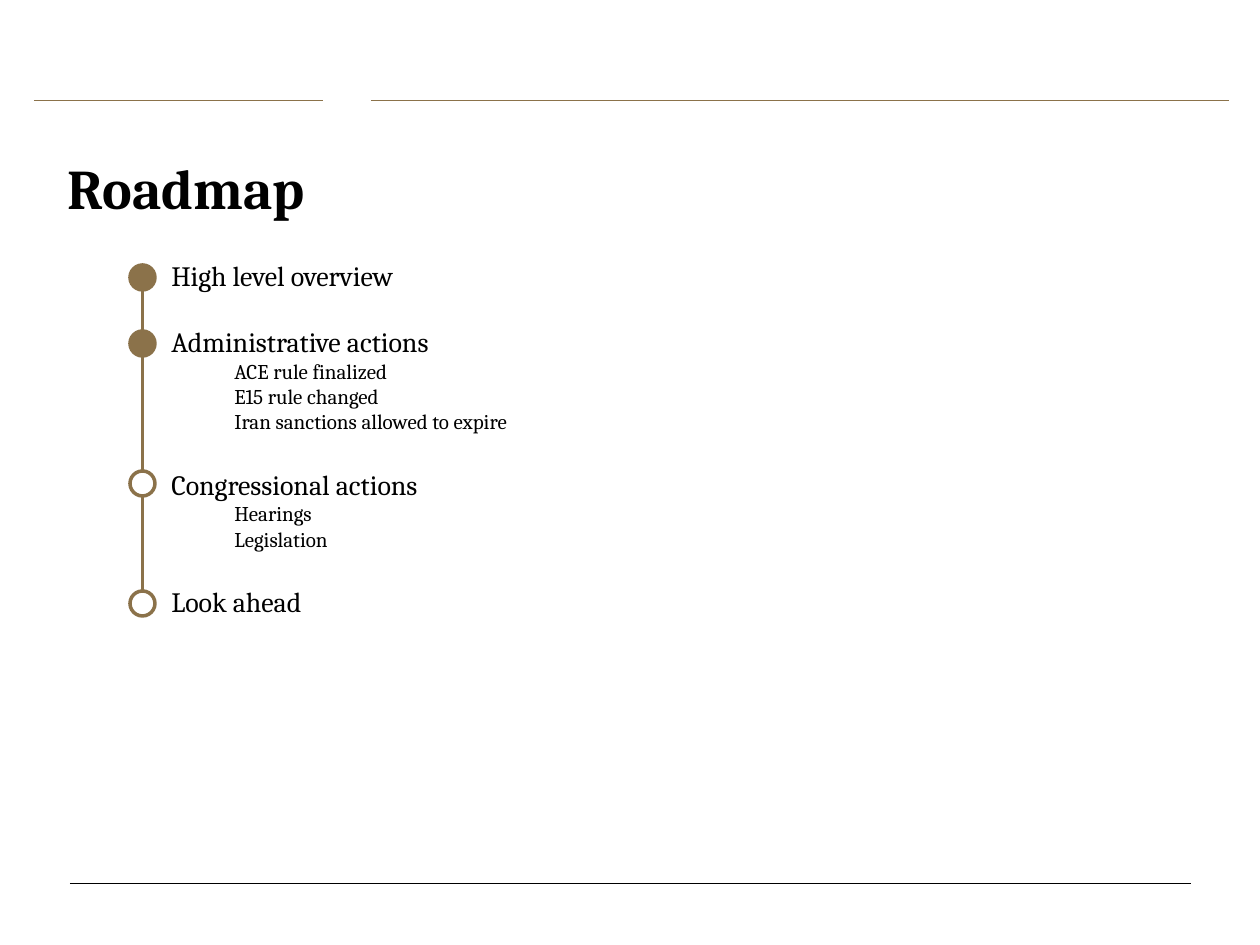
from lxml.etree import SubElement
from pptx import Presentation
from pptx.dml.color import RGBColor
from pptx.enum.shapes import MSO_CONNECTOR as Connector, MSO_SHAPE as Shape
from pptx.enum.text import MSO_ANCHOR as Anchor, MSO_AUTO_SIZE as AutoSize, PP_ALIGN as Align
from pptx.oxml.ns import qn
from pptx.util import Emu, Pt

SCALE = 914400 / 126
COLORS = {"black": "000000", "white": "FFFFFF", "bronze": "8B724A"}
FONT = "Cambria"
SECTIONS = [
    ("High level overview", []),
    ("Administrative actions",
     ["ACE rule finalized", "E15 rule changed", "Iran sanctions allowed to expire"]),
    ("Congressional actions", ["Hearings", "Legislation"]),
    ("Look ahead", []),
]
MARKERS = [(13, "bronze"), (79, "bronze"), (219, "white"), (339, "white")]


def px(value):
    return Emu(round(value * SCALE))


def color(name):
    return RGBColor.from_string(COLORS[name])


def write(paragraph, text, size=16, bold=False, indent=0, before=0, line_spacing=1.0):
    properties = paragraph._p.get_or_add_pPr()
    properties.set("marL", str(px(indent)))
    properties.set("indent", "0")
    paragraph.alignment = Align.LEFT
    paragraph.space_before = Pt(before)
    paragraph.line_spacing = line_spacing
    run = paragraph.add_run()
    run.text = text
    run.font.name = FONT
    run.font.size = Pt(size)
    run.font.bold = bold
    run.font.color.rgb = color("black")


def add_line(slide, start, end, line_color, width=0.5):
    line = slide.shapes.add_connector(Connector.STRAIGHT, *map(px, start + end))
    line.line.color.rgb = color(line_color)
    line.line.width = Pt(width)
    SubElement(line._element.spPr, qn("a:effectLst"))


def add_shape(slide, kind, left, top, width, height, fill, outline=None):
    shape = slide.shapes.add_shape(kind, px(left), px(top), px(width), px(height))
    shape.shadow.inherit = False
    shape.fill.solid()
    shape.fill.fore_color.rgb = color(fill)
    if outline:
        shape.line.color.rgb = color(outline)
        shape.line.width = Pt(2)
    else:
        shape.line.fill.background()
    return shape


def add_rules(slide):
    add_line(slide, (70, 883), (1191, 883), "black")
    for left, right in ((34, 323), (371, 1229)):
        add_line(slide, (left, 100), (right, 100), "bronze")


def add_title(slide, left, top, width, height):
    title = slide.shapes.title
    title.left, title.top, title.width, title.height = map(px, (left, top, width, height))
    frame = title.text_frame
    frame.auto_size = AutoSize.NONE
    frame.vertical_anchor = Anchor.TOP
    write(frame.paragraphs[0], "Roadmap", size=32, bold=True, line_spacing=0.9)


def add_timeline(slide, left, top, diameter=25):
    center = left + diameter / 2
    first, last = MARKERS[0][0], MARKERS[-1][0]
    add_line(slide, (center, top + first + diameter), (center, top + last + diameter),
             "bronze", 2.25)
    for offset, fill in MARKERS:
        add_shape(slide, Shape.OVAL, left, top + offset, diameter, diameter, fill, "bronze")


def add_agenda(slide, left, top, width, height):
    frame = add_shape(slide, Shape.RECTANGLE, left, top, width, height, "white").text_frame
    frame.word_wrap = True
    frame.vertical_anchor = Anchor.TOP
    for index, (heading, items) in enumerate(SECTIONS):
        paragraph = frame.add_paragraph() if index else frame.paragraphs[0]
        write(paragraph, heading, before=19 if index else 0)
        for item in items:
            write(frame.add_paragraph(), item, size=12, indent=63)


def main():
    presentation = Presentation()
    presentation.slide_width, presentation.slide_height = px(1260), px(945)
    slide = presentation.slides.add_slide(presentation.slide_layouts[5])
    add_rules(slide)
    add_title(slide, 55, 155, 1164, 154)
    add_timeline(slide, 130, 252)
    add_agenda(slide, 159, 252, 717, 378)
    presentation.save("out.pptx")


if __name__ == "__main__":
    main()
